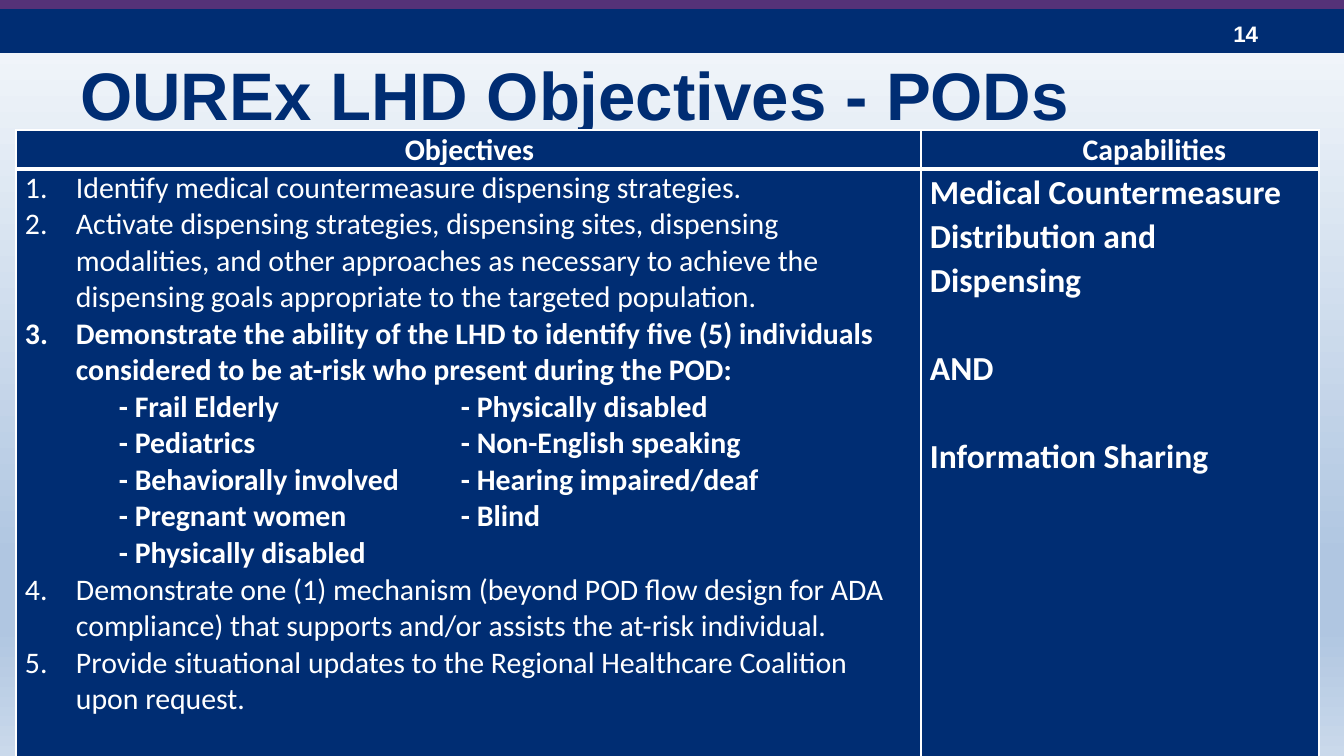
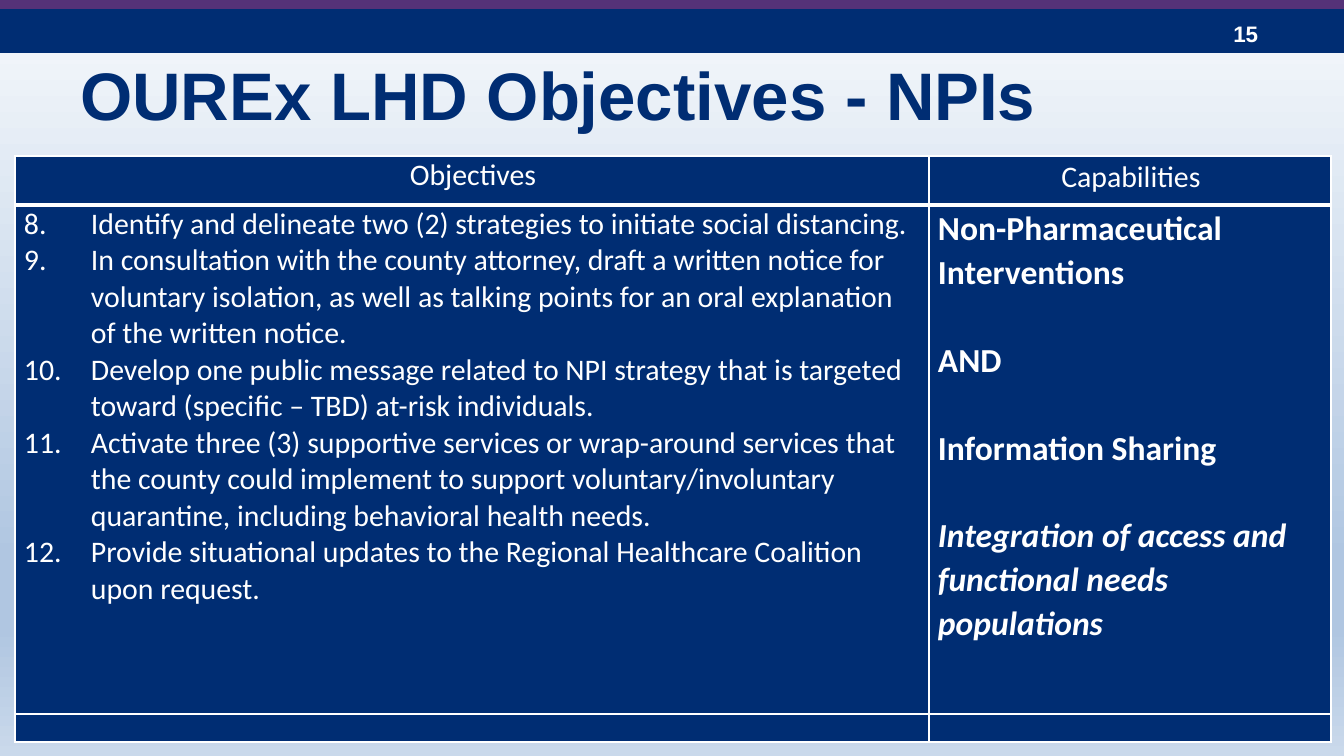
from lxml.etree import SubElement
from pptx import Presentation
from pptx.dml.color import RGBColor
from pptx.enum.shapes import MSO_SHAPE
from pptx.enum.text import MSO_ANCHOR, PP_ALIGN
from pptx.oxml.ns import qn
from pptx.util import Pt

SCALE = 914400 / 134.4
WIDE, HIGH = 1344, 756
HUES = {"navy": "002D73", "plum": "553278", "white": "FFFFFF"}
SKY = [(0, "F6F9FC"), (74, "B0C6E1"), (83, "B0C6E1"), (100, "CAD9EB")]
INSET = (9, 1, 7, 0)
TABS = (94, 436)
GAP = 23.5

PODS = {
    "page": "14",
    "title": "OUREx LHD Objectives - PODs",
    "box": (16, 130, 905, 398),
    "rows": (39, 616, 28),
    "head": {"bold": True, "lead": (1.03, 1.03), "shift": 67},
    "hang": 51,
    "goals": [
        (1, "Identify medical countermeasure dispensing strategies.", False),
        (1, "Activate dispensing strategies, dispensing sites, dispensing modalities, and other "
            "approaches as necessary to achieve the dispensing goals appropriate to the targeted "
            "population.", False),
        (1, "Demonstrate the ability of the LHD to identify five (5) individuals considered to be "
            "at-risk who present during the POD:", True),
        (0, "\t- Frail Elderly\t- Physically disabled", True),
        (0, "\t- Pediatrics\t- Non-English speaking", True),
        (0, "\t- Behaviorally involved\t- Hearing impaired/deaf", True),
        (0, "\t- Pregnant women\t- Blind", True),
        (0, "\t- Physically disabled", True),
        (4, "Demonstrate one (1) mechanism (beyond POD flow design for ADA compliance) that "
            "supports and/or assists the at-risk individual.", False),
        (4, "Provide situational updates to the Regional Healthcare Coalition upon request.", False),
    ],
    "skills": [
        ("Medical Countermeasure Distribution and Dispensing", False),
        ("AND", False),
        ("Information Sharing", False),
    ],
}

NPIS = {
    "page": "15",
    "title": "OUREx LHD Objectives - NPIs",
    "box": (15, 156, 914, 402),
    "rows": (49, 509, 28),
    "head": {"bold": False, "lead": (1.0, 1.07), "shift": 0},
    "hang": 67,
    "goals": [
        (8, "Identify and delineate two (2) strategies to initiate social distancing.", False),
        (8, "In consultation with the county attorney, draft a written notice for voluntary "
            "isolation, as well as talking points for an oral explanation of the written notice.",
         False),
        (8, "Develop one public message related to NPI strategy that is targeted toward "
            "(specific – TBD) at-risk individuals.", False),
        (8, "Activate three (3) supportive services or wrap-around services that the county could "
            "implement to support voluntary/involuntary quarantine, including behavioral health "
            "needs.", False),
        (8, "Provide situational updates to the Regional Healthcare Coalition upon request.", False),
    ],
    "skills": [
        ("Non-Pharmaceutical Interventions", False),
        ("AND", False),
        ("Information Sharing", False),
        ("Integration of access and functional needs populations", True),
    ],
}


def px(size):
    """Turn pixels into EMU."""
    return round(size * SCALE)


def hue(name):
    """Look up a named colour."""
    return RGBColor.from_string(HUES[name])


def style(para, size, tint="white", bold=False, slant=False, face="Calibri"):
    """Format every run of a paragraph."""
    for run in para.runs:
        font = run.font
        font.name, font.size = face, Pt(size)
        font.bold, font.italic = bold, slant
        font.color.rgb = hue(tint)


def sky(slide):
    """Fill the slide background with the shared gradient."""
    slide.background.fill.gradient()
    root = slide.element
    stops = root.find(".//" + qn("a:gsLst"))
    for stop in list(stops):
        stops.remove(stop)
    for place, tint in SKY:
        stop = SubElement(stops, qn("a:gs"), pos=str(place * 1000))
        SubElement(stop, qn("a:srgbClr"), val=tint)
    root.find(".//" + qn("a:lin")).set("ang", "5400000")


def band(slide, top, tall, tint):
    """Draw a bar across the slide."""
    bar = slide.shapes.add_shape(MSO_SHAPE.RECTANGLE, 0, px(top), px(WIDE), px(tall))
    bar.shadow.inherit = False
    bar.fill.solid()
    bar.fill.fore_color.rgb = hue(tint)
    bar.line.fill.background()


def label(slide, box, text, size, tint):
    """Place one line of bold heading text."""
    frame = slide.shapes.add_textbox(*map(px, box)).text_frame
    frame.word_wrap = True
    frame.vertical_anchor = MSO_ANCHOR.MIDDLE
    frame.text = text
    style(frame.paragraphs[0], size, tint, True, face="Arial")


def paint(cell, first):
    """Give a cell its insets, borders and fill."""
    sides = map(px, INSET)
    cell.margin_left, cell.margin_top, cell.margin_right, cell.margin_bottom = sides
    props = cell._tc.get_or_add_tcPr()
    for side in "LRTB":
        thick = 3 if first and side == "B" else 1
        line = SubElement(props, qn("a:ln" + side), w=str(Pt(thick)))
        fill = SubElement(line, qn("a:solidFill"))
        SubElement(fill, qn("a:srgbClr"), val=HUES["white"])
    cell.fill.solid()
    cell.fill.fore_color.rgb = hue("navy")


def paras(cell, texts):
    """Write one paragraph per text and return them."""
    frame = cell.text_frame
    for spot, text in enumerate(texts):
        para = frame.add_paragraph() if spot else frame.paragraphs[0]
        para.text = text
    return frame.paragraphs


def heads(cells, look):
    """Fill the header row."""
    for cell, text, lead in zip(cells, ("Objectives", "Capabilities"), look["lead"]):
        para = paras(cell, [text])[0]
        para.alignment = PP_ALIGN.CENTER
        para.line_spacing = lead
        style(para, 16, bold=look["bold"])
    props = para._p.get_or_add_pPr()
    props.set("marL", str(px(look["shift"])))


def goals(cell, items, hang):
    """Fill the numbered objectives, with tabbed lines where unnumbered."""
    lines = paras(cell, [text for _, text, _ in items])
    for para, (start, _, bold) in zip(lines, items):
        props = para._p.get_or_add_pPr()
        if start:
            props.set("marL", str(px(hang)))
            props.set("indent", str(-px(hang)))
            SubElement(props, qn("a:buAutoNum"), type="arabicPeriod", startAt=str(start))
        else:
            stops = SubElement(props, qn("a:tabLst"))
            for place in TABS:
                SubElement(stops, qn("a:tab"), pos=str(px(place)), algn="l")
        style(para, 16, bold=bold)


def skills(cell, items):
    """Fill the capabilities, one line apart."""
    lines = paras(cell, [text for text, _ in items])
    for spot, (para, (_, slant)) in enumerate(zip(lines, items)):
        para.line_spacing = 1.07
        if spot:
            para.space_before = Pt(GAP)
        style(para, 18, bold=True, slant=slant)


def grid(slide, data):
    """Build the table of objectives and capabilities."""
    left, top, *cols = data["box"]
    rows = data["rows"]
    area = map(px, (left, top, sum(cols), sum(rows)))
    table = slide.shapes.add_table(len(rows), len(cols), *area).table
    table.first_row = table.horz_banding = False
    for col, wide in zip(table.columns, cols):
        col.width = px(wide)
    for spot, (row, tall) in enumerate(zip(table.rows, rows)):
        row.height = px(tall)
        for cell in row.cells:
            paint(cell, spot == 0)
    heads(table.rows[0].cells, data["head"])
    goals(table.cell(1, 0), data["goals"], data["hang"])
    skills(table.cell(1, 1), data["skills"])
    for cell in table.rows[2].cells:
        SubElement(cell.text_frame.paragraphs[0]._p, qn("a:endParaRPr"), sz="1200")


def page(deck, data):
    """Add one slide of objectives."""
    slide = deck.slides.add_slide(deck.slide_layouts[6])
    sky(slide)
    band(slide, 9, 44, "navy")
    label(slide, (1220, 13, 101, 40), data["page"], 12, "white")
    band(slide, 0, 9, "plum")
    label(slide, (67, 31, 1210, 126), data["title"], 36, "navy")
    grid(slide, data)


def main():
    """Build and save the deck."""
    deck = Presentation()
    deck.slide_width, deck.slide_height = px(WIDE), px(HIGH)
    for data in (PODS, NPIS):
        page(deck, data)
    deck.save("out.pptx")


if __name__ == "__main__":
    main()
